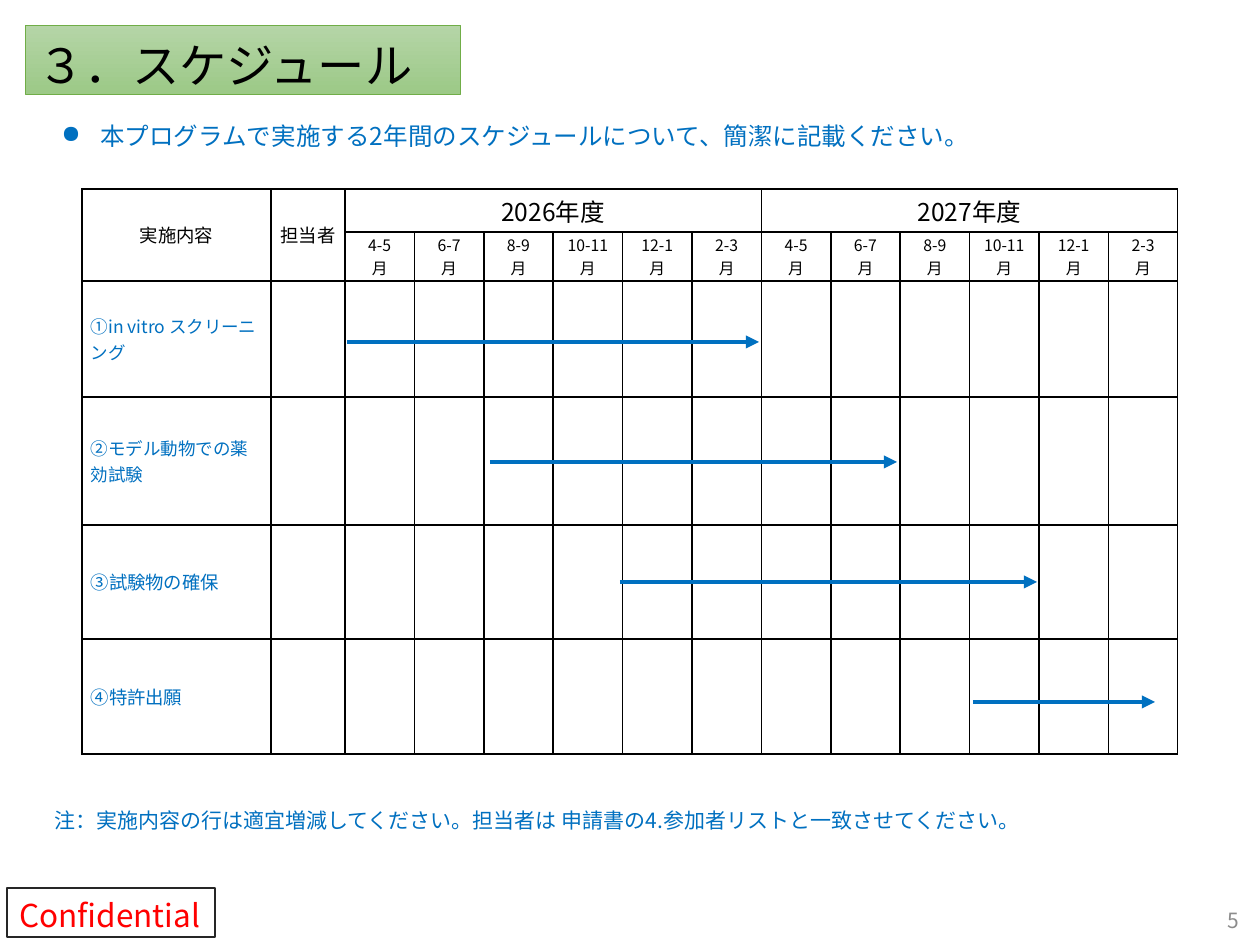
from lxml import etree
from pptx import Presentation
from pptx.dml.color import RGBColor
from pptx.enum.shapes import MSO_CONNECTOR, MSO_SHAPE
from pptx.enum.text import MSO_ANCHOR, MSO_AUTO_SIZE, PP_ALIGN
from pptx.oxml.ns import qn
from pptx.util import Emu, Pt

LEFT, CENTER, RIGHT = PP_ALIGN.LEFT, PP_ALIGN.CENTER, PP_ALIGN.RIGHT
TOP, MIDDLE = MSO_ANCHOR.TOP, MSO_ANCHOR.MIDDLE
RECTANGLE, STRAIGHT = MSO_SHAPE.RECTANGLE, MSO_CONNECTOR.STRAIGHT
NO_AUTOFIT = MSO_AUTO_SIZE.NONE

BLACK = RGBColor(0x00, 0x00, 0x00)
BLUE = RGBColor(0x00, 0x70, 0xC0)
RED = RGBColor(0xFF, 0x00, 0x00)
GRAY = RGBColor(0x8C, 0x8C, 0x8C)
DARK_GRAY = RGBColor(0x26, 0x26, 0x26)
LIGHT_GREEN = RGBColor(0xB5, 0xD5, 0xA7)
MID_GREEN = RGBColor(0x9C, 0xC9, 0x87)
LINE_GREEN = RGBColor(0x70, 0xAD, 0x47)

FONT = "Noto Sans CJK JP"
EMU_PER_PX = 914400 / 126

# Schedule content
YEARS = ["2026年度", "2027年度"]
MONTHS = ["4-5", "6-7", "8-9", "10-11", "12-1", "2-3"]
TASKS = [
    ("①in vitro スクリーニング", 10),
    ("②モデル動物での薬効試験", 10),
    ("③試験物の確保", 10.5),
    ("④特許出願", 10.5),
]
ARROW_SPANS = [(347, 759), (490, 897), (620, 1037), (973, 1155)]
ARROW_TOP, ARROW_STEP = 342, 120

# Table grid
TABLE_LEFT, TABLE_TOP = 82, 189
TASK_WIDTH, PERSON_WIDTH, PERIOD_WIDTH = 189, 74, 833
ROW_HEIGHTS = [43, 49, 116, 128, 114, 115]


def px(value):
    return Emu(round(value * EMU_PER_PX))


def write_text(frame, text, *, size, color=BLACK, align=LEFT, anchor=TOP):
    frame.vertical_anchor = anchor
    frame.text = text
    for paragraph in frame.paragraphs:
        paragraph.alignment = align
        for run in paragraph.runs:
            run.font.size = Pt(size)
            run.font.name = FONT
            run.font.color.rgb = color
            east_asian = etree.SubElement(run.font._element, qn("a:ea"))
            east_asian.set("typeface", FONT)


def add_text(slide, box, text, **text_format):
    shape = slide.shapes.add_textbox(*map(px, box))
    shape.text_frame.word_wrap = True
    write_text(shape.text_frame, text, **text_format)
    return shape


def add_bullet(paragraph, character, indent):
    properties = paragraph._p.get_or_add_pPr()
    properties.set("marL", str(px(indent)))
    properties.set("indent", str(-px(indent)))
    etree.SubElement(properties, qn("a:buChar")).set("char", character)


def format_title(slide, box, text):
    title = slide.shapes.title
    title.left, title.top, title.width, title.height = map(px, box)
    title.fill.gradient()
    title.fill.gradient_angle = 270
    for stop, color in zip(title.fill.gradient_stops, (LIGHT_GREEN, MID_GREEN)):
        stop.color.rgb = color
    title.line.color.rgb = LINE_GREEN
    title.line.width = Pt(0.5)
    frame = title.text_frame
    frame.auto_size = NO_AUTOFIT
    frame.margin_top, frame.margin_bottom = px(15), px(5)
    write_text(frame, text, size=27, anchor=MIDDLE)


def add_stamp(slide, box, text):
    stamp = slide.shapes.add_shape(RECTANGLE, *map(px, box))
    stamp.shadow.inherit = False
    stamp.fill.background()
    stamp.line.color.rgb = DARK_GRAY
    stamp.line.width = Pt(0.75)
    frame = stamp.text_frame
    frame.word_wrap = False
    frame.margin_top, frame.margin_bottom = px(10), px(5)
    write_text(frame, text, size=18, color=RED, anchor=MIDDLE)


def format_cell(cell):
    cell.margin_left = cell.margin_right = px(9)
    cell.margin_top = cell.margin_bottom = 0
    properties = cell._tc.get_or_add_tcPr()
    for index, side in enumerate(("a:lnL", "a:lnR", "a:lnT", "a:lnB")):
        border = etree.Element(qn(side), w=str(Pt(1)))
        fill = etree.SubElement(border, qn("a:solidFill"))
        etree.SubElement(fill, qn("a:srgbClr")).set("val", str(BLACK))
        properties.insert(index, border)
    cell.fill.background()


def add_schedule(slide):
    period_count = len(YEARS) * len(MONTHS)
    width = TASK_WIDTH + PERSON_WIDTH + PERIOD_WIDTH
    table = slide.shapes.add_table(
        len(ROW_HEIGHTS), 2 + period_count, px(TABLE_LEFT), px(TABLE_TOP),
        px(width), px(sum(ROW_HEIGHTS))).table
    table.first_row = table.horz_banding = False

    widths = [TASK_WIDTH, PERSON_WIDTH] + [PERIOD_WIDTH / period_count] * period_count
    for column, column_width in zip(table.columns, widths):
        column.width = px(column_width)
    for row, height in zip(table.rows, ROW_HEIGHTS):
        row.height = px(height)
    for cell in table.iter_cells():
        format_cell(cell)

    def write_cell(row, column, text, **text_format):
        write_text(table.cell(row, column).text_frame, text, **text_format)
        table.cell(row, column).vertical_anchor = MIDDLE

    # Header rows
    for column, heading in enumerate(("実施内容", "担当者")):
        table.cell(0, column).merge(table.cell(1, column))
        write_cell(0, column, heading, size=10.5, align=CENTER)
    for year_index, year in enumerate(YEARS):
        first = 2 + year_index * len(MONTHS)
        table.cell(0, first).merge(table.cell(0, first + len(MONTHS) - 1))
        write_cell(0, first, year, size=14, align=CENTER)
        for column, months in enumerate(MONTHS, start=first):
            write_cell(1, column, f"{months}\n月", size=9, align=CENTER)

    # Task rows
    for row, (task, size) in enumerate(TASKS, start=2):
        write_cell(row, 0, task, size=size, color=BLUE)


def add_arrow(slide, start, end, y):
    arrow = slide.shapes.add_connector(STRAIGHT, px(start), px(y), px(end), px(y))
    arrow.line.color.rgb = BLUE
    arrow.line.width = Pt(2.5)
    etree.SubElement(arrow.line._get_or_add_ln(), qn("a:tailEnd")).set("type", "triangle")
    etree.SubElement(arrow._element.spPr, qn("a:effectLst"))


def main():
    presentation = Presentation()
    presentation.slide_width, presentation.slide_height = px(1260), px(945)
    slide = presentation.slides.add_slide(presentation.slide_layouts[5])

    # Heading and guidance
    add_stamp(slide, (7, 888, 208, 49), "Confidential")
    format_title(slide, (25, 25, 436, 69), "３．スケジュール")
    guidance = add_text(
        slide, (49, 115, 1188, 43),
        "本プログラムで実施する2年間のスケジュールについて、簡潔に記載ください。",
        size=14, color=BLUE)
    add_bullet(guidance.text_frame.paragraphs[0], "●", 39)

    # Schedule with its task bars
    add_schedule(slide)
    for index, (start, end) in enumerate(ARROW_SPANS):
        add_arrow(slide, start, end, ARROW_TOP + index * ARROW_STEP)

    # Note and page number
    add_text(
        slide, (42, 801, 1177, 38),
        "注：実施内容の行は適宜増減してください。担当者は 申請書の4.参加者リストと一致させてください。",
        size=12, color=BLUE)
    add_text(slide, (1193, 903, 59, 35), "5",
             size=12, color=GRAY, align=RIGHT, anchor=MIDDLE)

    presentation.save("out.pptx")


if __name__ == "__main__":
    main()
